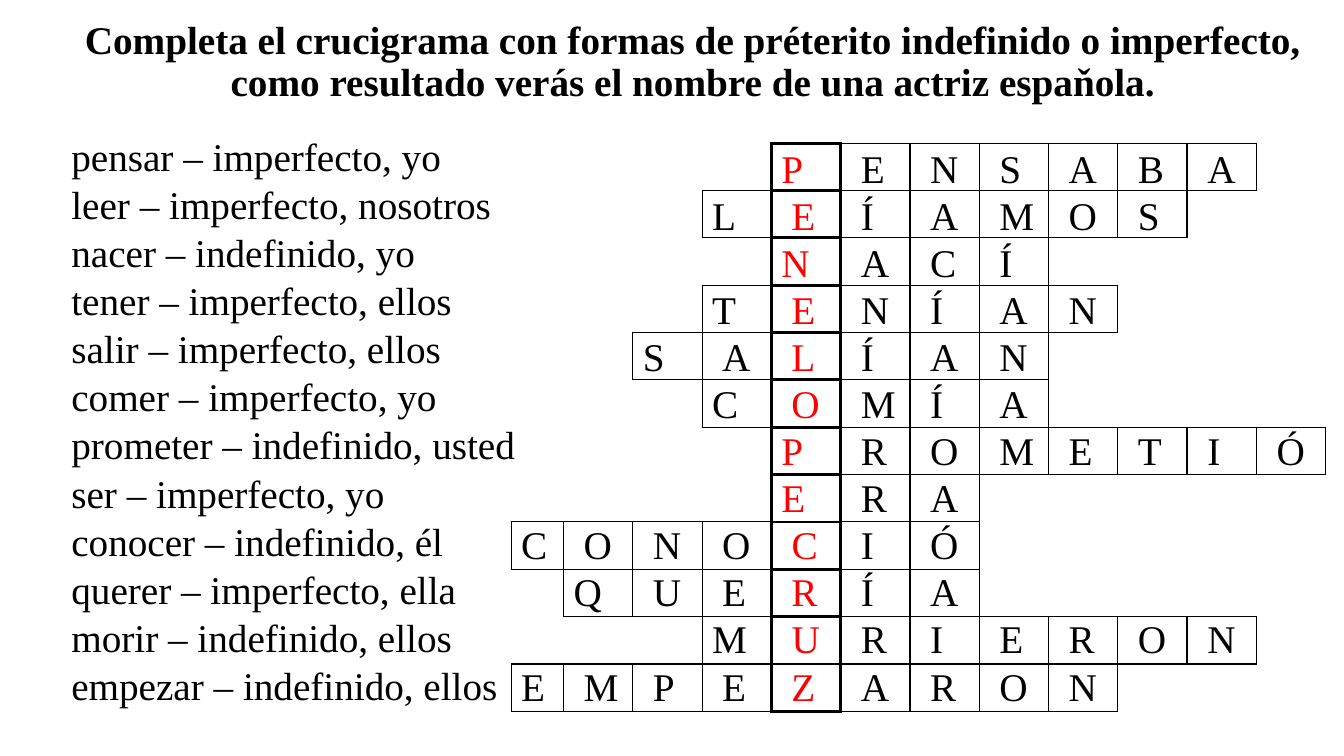
from dataclasses import dataclass

from pptx import Presentation
from pptx.dml.color import RGBColor
from pptx.enum.text import MSO_ANCHOR, MSO_AUTO_SIZE, PP_ALIGN
from pptx.oxml.ns import qn
from pptx.util import Inches, Pt
from lxml.etree import SubElement


@dataclass(frozen=True)
class Theme:
    font: str = "Times New Roman"
    size: Pt = Pt(28)
    ink: RGBColor = RGBColor(0, 0, 0)
    key: RGBColor = RGBColor(255, 0, 0)
    thin: Pt = Pt(1)
    thick: Pt = Pt(2.25)


THEME = Theme()
KEY_COLUMN = 4
COLUMN_COUNT = 12
GRID_LEFT, GRID_TOP, GRID_WIDTH = 5.07, 1.42, 8.08
ROW_HEIGHT = 0.47
FIRST_WIDTH = 0.52
COLUMN_WIDTH = (GRID_WIDTH - FIRST_WIDTH) / (COLUMN_COUNT - 1)

# Clue, answer, column of the first letter
ENTRIES = [
    ("pensar – imperfecto, yo", "PENSABA", 4),
    ("leer – imperfecto, nosotros", "LEÍAMOS", 3),
    ("nacer – indefinido, yo", "NACÍ", 4),
    ("tener – imperfecto, ellos", "TENÍAN", 3),
    ("salir – imperfecto, ellos", "SALÍAN", 2),
    ("comer – imperfecto, yo", "COMÍA", 3),
    ("prometer – indefinido, usted", "PROMETIÓ", 4),
    ("ser – imperfecto, yo", "ERA", 4),
    ("conocer – indefinido, él", "CONOCIÓ", 0),
    ("querer – imperfecto, ella", "QUERÍA", 1),
    ("morir – indefinido, ellos", "MURIERON", 3),
    ("empezar – indefinido, ellos", "EMPEZARON", 0),
]


def add_run(paragraph, text, color=THEME.ink, bold=False):
    run = paragraph.add_run()
    run.text = text
    run.font.name = THEME.font
    run.font.size = THEME.size
    run.font.bold = bold
    run.font.color.rgb = color


def add_line_box(slide, left, top, width):
    """Add a one-line text box and return its paragraph."""
    box = slide.shapes.add_textbox(Inches(left), Inches(top), Inches(width), Inches(0.57))
    box.text_frame.word_wrap = True
    return box.text_frame.paragraphs[0]


presentation = Presentation()
presentation.slide_width = Inches(13.33)
presentation.slide_height = Inches(7.5)
slide = presentation.slides.add_slide(presentation.slide_layouts[5])

# Title
title = slide.shapes.title
title.left, title.top = Inches(0.58), Inches(0.18)
title.width, title.height = Inches(12.58), Inches(0.89)
title.text_frame.word_wrap = True
title.text_frame.auto_size = MSO_AUTO_SIZE.NONE
title.text_frame.vertical_anchor = MSO_ANCHOR.MIDDLE
title_paragraph = title.text_frame.paragraphs[0]
title_paragraph.alignment = PP_ALIGN.CENTER
title_paragraph.line_spacing = 0.9
add_run(
    title_paragraph,
    "Completa el crucigrama con formas de préterito indefinido o imperfecto, "
    "como resultado verás el nombre de una actriz espaňola.",
    bold=True,
)

# Crossword grid
table = slide.shapes.add_table(
    len(ENTRIES), COLUMN_COUNT, Inches(GRID_LEFT), Inches(GRID_TOP),
    Inches(GRID_WIDTH), Inches(ROW_HEIGHT * len(ENTRIES)),
).table
table.first_row = False
table.horz_banding = False
for column_index, column in enumerate(table.columns):
    column.width = Inches(COLUMN_WIDTH if column_index else FIRST_WIDTH)

letter_cells = {
    (row, start + index)
    for row, (_, answer, start) in enumerate(ENTRIES)
    for index in range(len(answer))
}
SIDES = {"a:lnL": (0, -1), "a:lnR": (0, 1), "a:lnT": (-1, 0), "a:lnB": (1, 0)}

for row in range(len(ENTRIES)):
    table.rows[row].height = Inches(ROW_HEIGHT)
    for column in range(COLUMN_COUNT):
        cell = table.cell(row, column)
        properties = cell._tc.get_or_add_tcPr()
        for tag, (row_step, column_step) in SIDES.items():
            # Both cells that share an edge get the same border
            sharing = {(row, column), (row + row_step, column + column_step)} & letter_cells
            border = SubElement(properties, qn(tag))
            if not sharing:
                SubElement(border, qn("a:noFill"))
                continue
            on_key = any(shared_column == KEY_COLUMN for _, shared_column in sharing)
            border.set("w", str(THEME.thick if on_key else THEME.thin))
            fill = SubElement(border, qn("a:solidFill"))
            SubElement(fill, qn("a:srgbClr"), val=str(THEME.ink))
        cell.fill.background()

# Clues
for row, (clue, _, _) in enumerate(ENTRIES):
    add_run(add_line_box(slide, 0.61, 1.26 + 0.4775 * row, 4.9), clue)

# Answers, one tab stop per grid column
column_lefts = [GRID_LEFT] + [
    GRID_LEFT + FIRST_WIDTH + COLUMN_WIDTH * index for index in range(COLUMN_COUNT)
]
for row, (_, answer, start) in enumerate(ENTRIES):
    left = column_lefts[start]
    end = start + len(answer)
    paragraph = add_line_box(slide, left, 1.38 + 0.467 * row, column_lefts[end] - left)
    tab_list = SubElement(paragraph._p.get_or_add_pPr(), qn("a:tabLst"))
    for column_left in column_lefts[start + 1:end]:
        position = Inches(column_left - left + 0.1)
        SubElement(tab_list, qn("a:tab"), pos=str(position), algn="l")
    key_index = KEY_COLUMN - start
    if key_index:
        add_run(paragraph, "\t".join(answer[:key_index]) + "\t")
    add_run(paragraph, answer[key_index], THEME.key)
    add_run(paragraph, "\t" + "\t".join(answer[key_index + 1:]))

presentation.save("out.pptx")
